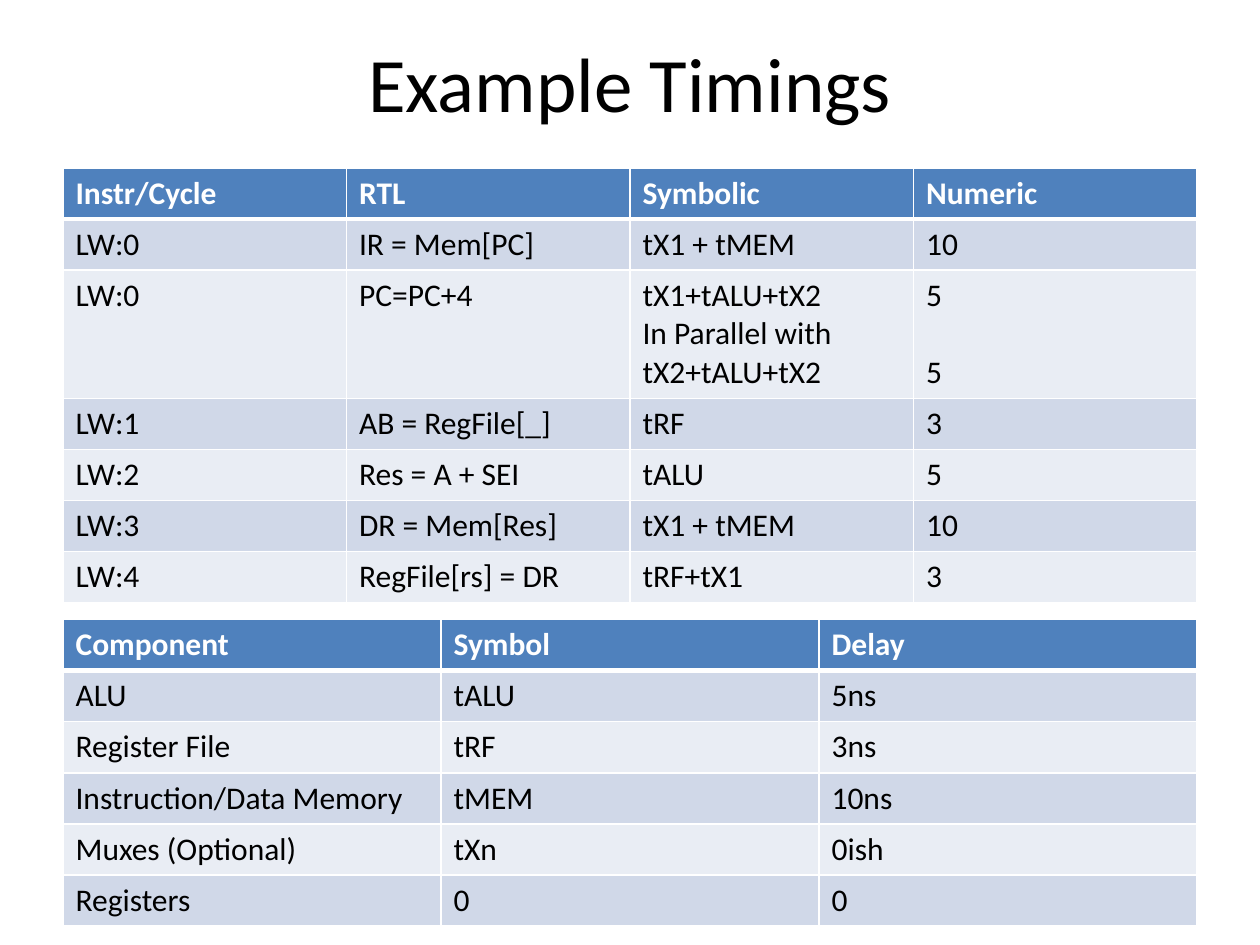
"""Build the Example Timings slide: instruction timings above component delays."""
from lxml.etree import SubElement
from pptx import Presentation
from pptx.dml.color import RGBColor
from pptx.enum.text import MSO_ANCHOR as Anchor, PP_ALIGN as Align
from pptx.oxml.ns import qn
from pptx.util import Pt

BLACK = RGBColor(0x00, 0x00, 0x00)
WHITE = RGBColor(0xFF, 0xFF, 0xFF)
HEADER = RGBColor(0x4F, 0x81, 0xBD)
BANDS = [RGBColor(0xE9, 0xED, 0xF4), RGBColor(0xD0, 0xD8, 0xE8)]

TITLE = "Example Timings"
TIMINGS = [
    ("Instr/Cycle", "RTL", "Symbolic", "Numeric"),
    ("LW:0", "IR = Mem[PC]", "tX1 + tMEM", "10"),
    ("LW:0", "PC=PC+4", "tX1+tALU+tX2\nIn Parallel with\ntX2+tALU+tX2", "5\n\n5"),
    ("LW:1", "AB = RegFile[_]", "tRF", "3"),
    ("LW:2", "Res = A + SEI", "tALU", "5"),
    ("LW:3", "DR = Mem[Res]", "tX1 + tMEM", "10"),
    ("LW:4", "RegFile[rs] = DR", "tRF+tX1", "3"),
]
DELAYS = [
    ("Component", "Symbol", "Delay"),
    ("ALU", "tALU", "5ns"),
    ("Register File", "tRF", "3ns"),
    ("Instruction/Data Memory", "tMEM", "10ns"),
    ("Muxes (Optional)", "tXn", "0ish"),
    ("Registers", "0", "0"),
]
LEFT, WIDTH = 36, 648
ROW_HEIGHT, LINE_HEIGHT = 29.2, 22
TITLE_FONT = {"name": "Calibri", "size": Pt(44), "bold": False}
HEADER_FONT = {"name": "Calibri", "size": Pt(18), "bold": True}
BODY_FONT = {**HEADER_FONT, "bold": False}


def format_font(font, values, color):
    for attribute, value in values.items():
        setattr(font, attribute, value)
    font.color.rgb = color


def write_lines(frame, text, values, color):
    skipped = 0
    paragraph = frame.paragraphs[0]
    for index, line in enumerate(text.split("\n")):
        if not line:
            skipped += 1
            continue
        if index:
            paragraph = frame.add_paragraph()
        if skipped:
            paragraph.space_before = Pt(skipped * LINE_HEIGHT)
            skipped = 0
        run = paragraph.add_run()
        run.text = line
        format_font(run.font, values, color)


def add_borders(cell, row):
    widths = {"L": 1, "R": 1, "T": 3 if row == 1 else 1, "B": 3 if row == 0 else 1}
    properties = cell._tc.get_or_add_tcPr()
    for side, width in widths.items():
        border = SubElement(properties, qn(f"a:ln{side}"), w=str(Pt(width)))
        SubElement(SubElement(border, qn("a:solidFill")), qn("a:srgbClr"), val=str(WHITE))


def add_timing_table(slide, top, rows):
    heights = [ROW_HEIGHT + LINE_HEIGHT * max(text.count("\n") for text in row) for row in rows]
    columns = len(rows[0])
    table = slide.shapes.add_table(
        len(rows), columns, Pt(LEFT), Pt(top), Pt(WIDTH), Pt(sum(heights))
    ).table
    for column in table.columns:
        column.width = Pt(WIDTH / columns)
    for row, texts in enumerate(rows):
        table.rows[row].height = Pt(heights[row])
        fill, values, color = (
            (BANDS[row % 2], BODY_FONT, BLACK) if row else (HEADER, HEADER_FONT, WHITE)
        )
        for column, text in enumerate(texts):
            cell = table.cell(row, column)
            add_borders(cell, row)
            cell.fill.solid()
            cell.fill.fore_color.rgb = fill
            write_lines(cell.text_frame, text, values, color)


def main():
    deck = Presentation()
    deck.slide_width, deck.slide_height = Pt(720), Pt(540)
    slide = deck.slides.add_slide(deck.slide_layouts[6])
    heading = slide.shapes.add_textbox(Pt(LEFT), Pt(1.5), Pt(WIDTH), Pt(90)).text_frame
    heading.word_wrap = True
    heading.vertical_anchor = Anchor.MIDDLE
    write_lines(heading, TITLE, TITLE_FONT, BLACK)
    heading.paragraphs[0].alignment = Align.CENTER
    add_timing_table(slide, 96, TIMINGS)
    add_timing_table(slide, 354, DELAYS)
    deck.save("out.pptx")


if __name__ == "__main__":
    main()
